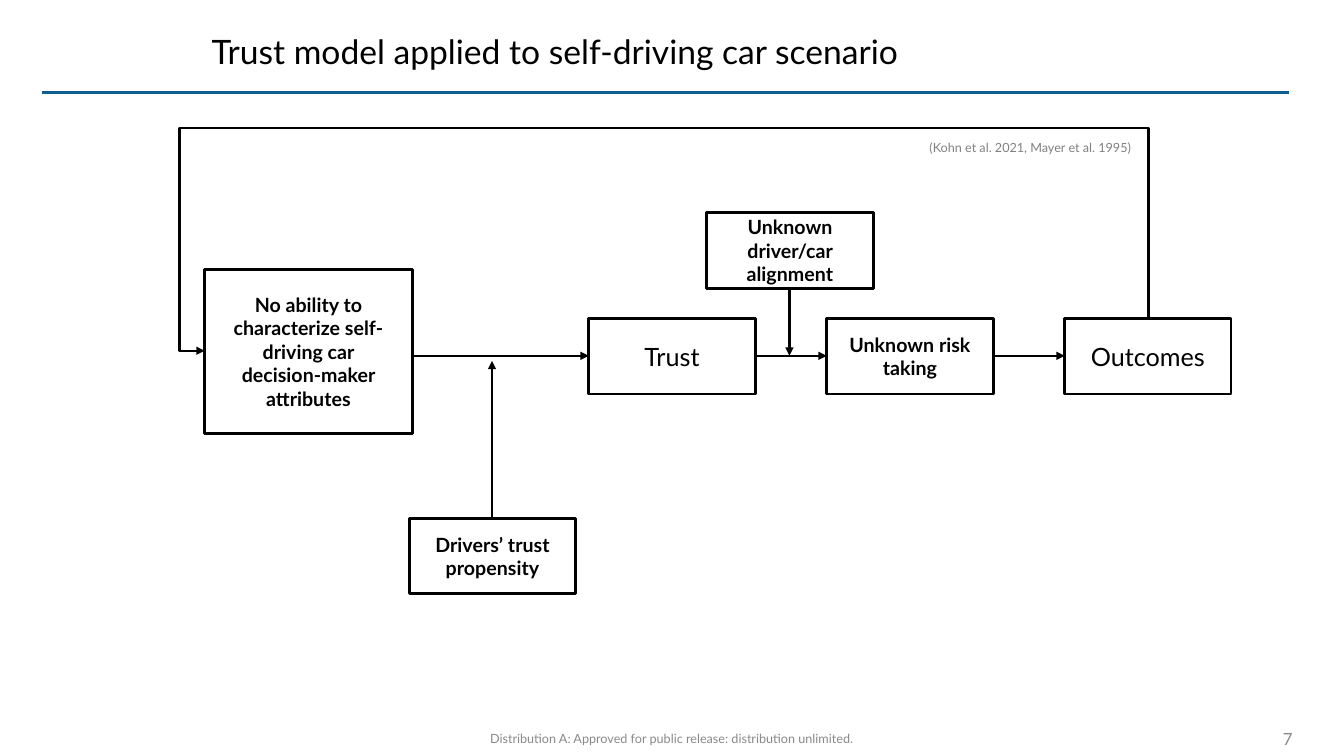
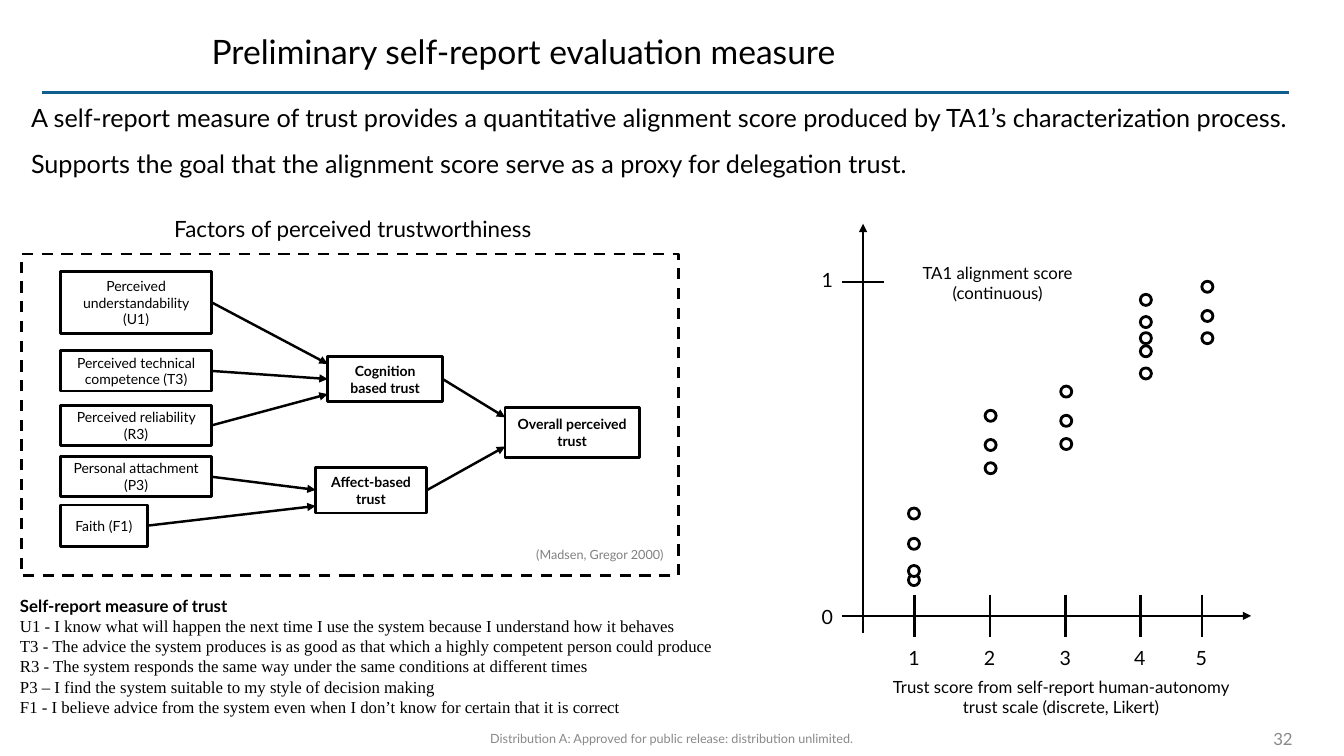
from dataclasses import dataclass
from typing import Optional

from lxml.etree import SubElement
from pptx import Presentation
from pptx.dml.color import RGBColor
from pptx.enum.dml import MSO_LINE
from pptx.enum.shapes import MSO_CONNECTOR, MSO_SHAPE
from pptx.enum.text import MSO_ANCHOR, PP_ALIGN
from pptx.oxml.ns import qn
from pptx.slide import Slide
from pptx.util import Inches, Pt

BLACK = RGBColor(0x00, 0x00, 0x00)
WHITE = RGBColor(0xFF, 0xFF, 0xFF)
BLUE = RGBColor(0x0F, 0x5E, 0x90)
GRAY = RGBColor(0x80, 0x80, 0x80)
PALE = RGBColor(0x89, 0x89, 0x89)

SANS = "Lato"
SERIF = "Times New Roman"
THIN, THICK = 1.75, 2
LEFT, MID, RIGHT = PP_ALIGN.LEFT, PP_ALIGN.CENTER, PP_ALIGN.RIGHT


@dataclass
class Para:
    text: str
    size: float
    color: RGBColor = BLACK
    bold: bool = False
    font: str = SANS
    gap: float = 0


@dataclass
class Box:
    x: float
    y: float
    w: float
    h: float
    text: str
    size: float
    bold: bool = False
    pad: float = 0.1


@dataclass
class Line:
    x1: float
    y1: float
    x2: float
    y2: float
    arrow: bool = True
    color: RGBColor = BLACK


@dataclass
class Note:
    x: float
    y: float
    w: float
    h: float
    paras: list[Para]
    align: PP_ALIGN = LEFT
    wrap: bool = True
    anchor: MSO_ANCHOR = MSO_ANCHOR.TOP


# Drawing tools
def write(frame, paras: list[Para], align: PP_ALIGN) -> None:
    for i, item in enumerate(paras):
        para = frame.paragraphs[0] if i == 0 else frame.add_paragraph()
        para.alignment = align
        if item.gap:
            para.space_before = Pt(item.gap)
        run = para.add_run()
        run.text = item.text
        font = run.font
        font.name, font.size, font.bold = item.font, Pt(item.size), item.bold
        font.color.rgb = item.color


def add_note(slide: Slide, note: Note) -> None:
    area = [Inches(v) for v in (note.x, note.y, note.w, note.h)]
    frame = slide.shapes.add_textbox(*area).text_frame
    frame.word_wrap = note.wrap
    frame.vertical_anchor = note.anchor
    write(frame, note.paras, note.align)


def add_form(slide: Slide, kind: MSO_SHAPE, x: float, y: float, w: float, h: float,
             fill: Optional[RGBColor] = WHITE):
    shape = slide.shapes.add_shape(kind, Inches(x), Inches(y), Inches(w), Inches(h))
    shape.shadow.inherit = False
    if fill is None:
        shape.fill.background()
    else:
        shape.fill.solid()
        shape.fill.fore_color.rgb = fill
    shape.line.color.rgb = BLACK
    shape.line.width = Pt(THICK)
    return shape


def add_box(slide: Slide, box: Box) -> None:
    shape = add_form(slide, MSO_SHAPE.RECTANGLE, box.x, box.y, box.w, box.h)
    frame = shape.text_frame
    frame.word_wrap = True
    frame.vertical_anchor = MSO_ANCHOR.MIDDLE
    frame.margin_left = frame.margin_right = Inches(box.pad)
    write(frame, [Para(box.text, box.size, bold=box.bold)], MID)


def add_head(shape) -> None:
    stroke = shape.element.spPr.find(qn("a:ln"))
    SubElement(stroke, qn("a:tailEnd")).set("type", "triangle")


def add_line(slide: Slide, line: Line) -> None:
    ends = [Inches(v) for v in (line.x1, line.y1, line.x2, line.y2)]
    shape = slide.shapes.add_connector(MSO_CONNECTOR.STRAIGHT, *ends)
    shape.line.color.rgb = line.color
    shape.line.width = Pt(THIN)
    SubElement(shape.element.spPr, qn("a:effectLst"))
    if line.arrow:
        add_head(shape)


def add_bend(slide: Slide, points: list[tuple[float, float]]) -> None:
    spots = [(Inches(x), Inches(y)) for x, y in points]
    pen = slide.shapes.build_freeform(*spots[0])
    pen.add_line_segments(spots[1:], close=False)
    shape = pen.convert_to_shape()
    shape.shadow.inherit = False
    shape.fill.background()
    shape.line.color.rgb = BLACK
    shape.line.width = Pt(THIN)
    add_head(shape)


# Shared frame: title, rule, footer and page number
def add_page(deck, title: str, page: int) -> Slide:
    slide = deck.slides.add_slide(deck.slide_layouts[6])
    add_line(slide, Line(0.42, 0.92, 12.78, 0.92, False, BLUE))
    foot = "Distribution A: Approved for public release: distribution unlimited."
    center = MSO_ANCHOR.MIDDLE
    for note in (
        Note(2, 0.17, 10.78, 0.67, [Para(title, 24)], anchor=center),
        Note(1.94, 7.16, 9.44, 0.33, [Para(foot, 9, PALE)], MID, anchor=center),
        Note(11.81, 7.17, 1.11, 0.32, [Para(str(page), 12, PALE)], RIGHT, anchor=center),
    ):
        add_note(slide, note)
    return slide


# Trust model
def add_model(deck) -> None:
    slide = add_page(deck, "Trust model applied to self-driving car scenario", 7)
    wide, high, row = 1.65, 0.75, 3.16
    axis = 3.53
    boxes = [
        Box(2.03, 2.67, 2.06, 1.63,
            "No ability to characterize self-driving car decision-maker attributes", 14, True, 0.2),
        Box(5.84, row, wide, high, "Trust", 18),
        Box(8.2, row, wide, high, "Unknown risk taking", 14, True),
        Box(10.56, row, wide, high, "Outcomes", 18),
        Box(4.06, 5.14, wide, high, "Drivers’ trust propensity", 14, True),
        Box(7.01, 2.11, wide, high, "Unknown driver/car alignment", 14, True),
    ]
    for box in boxes:
        add_box(slide, box)
    chain = boxes[:4]
    for a, b in zip(chain, chain[1:]):
        add_line(slide, Line(a.x + a.w, axis, b.x, axis))
    add_line(slide, Line(7.83, 2.86, 7.83, axis))
    add_line(slide, Line(4.88, 5.14, 4.88, 3.58))
    add_bend(slide, [(11.39, row), (11.39, 1.27), (1.78, 1.27), (1.78, 3.48), (2.03, 3.48)])
    cite = Para("(Kohn et al. 2021, Mayer et al. 1995)", 9, GRAY)
    add_note(slide, Note(9.12, 1.34, 2.27, 0.25, [cite], wrap=False))


# Factors of trust
def add_factors(slide: Slide) -> None:
    frame = add_form(slide, MSO_SHAPE.RECTANGLE, 0.21, 2.52, 6.52, 3.19, None)
    frame.line.dash_style = MSO_LINE.DASH
    left, wide = 0.6, 1.5
    boxes = [
        Box(left, 2.69, wide, 0.62, "Perceived understandability (U1)", 10),
        Box(left, 3.48, wide, 0.4, "Perceived technical competence (T3)", 10),
        Box(left, 4.02, wide, 0.4, "Perceived reliability (R3)", 10),
        Box(left, 4.53, wide, 0.4, "Personal attachment (P3)", 10),
        Box(left, 5.01, 0.86, 0.41, "Faith (F1)", 10),
        Box(3.25, 3.54, 1.14, 0.44, "Cognition based trust", 10, True),
        Box(3.13, 4.64, 1.1, 0.45, "Affect-based trust", 10, True),
        Box(5.01, 4.04, 1.33, 0.5, "Overall perceived trust", 10, True),
    ]
    for box in boxes:
        add_box(slide, box)
    # Source box, target box, height at the target
    links = [(0, 5, 3.61), (1, 5, 3.76), (2, 5, 3.91), (3, 6, 4.86),
             (4, 6, 5.02), (5, 7, 4.14), (6, 7, 4.43)]
    for start, end, y in links:
        a = boxes[start]
        add_line(slide, Line(a.x + a.w, a.y + a.h / 2, boxes[end].x, y))
    head = Para("Factors of perceived trustworthiness", 16)
    cite = Para("(Madsen, Gregor 2000)", 9, GRAY)
    add_note(slide, Note(1.63, 2.09, 3.9, 0.4, [head], wrap=False))
    add_note(slide, Note(5.22, 5.38, 1.5, 0.25, [cite], wrap=False))


# Score plot
def add_plot(slide: Slide) -> None:
    base, side, half, dot = 6.11, 8.56, 0.21, 0.11
    add_line(slide, Line(8.35, base, 12.41, base))
    add_line(slide, Line(side, 6.28, side, 2.22))
    add_line(slide, Line(side - half, 2.8, side + half, 2.8, False))

    def add_mark(text: str, x: float, y: float) -> None:
        add_note(slide, Note(x, y, 0.31, 0.34, [Para(text, 14)], wrap=False))

    add_mark("1", 8.05, 2.61)
    add_mark("0", 8.05, 5.95)
    # Tick, left of dots, tops of dots
    ranks = [
        (9.07, 9.01, (5.7, 5.61, 5.34, 5.04)),
        (9.82, 9.77, (4.59, 4.36, 4.07)),
        (10.57, 10.52, (4.35, 4.12, 3.83)),
        (11.31, 11.31, (3.65, 3.43, 3.3, 3.14, 2.92)),
        (11.92, 11.92, (3.3, 3.08, 2.79)),
    ]
    for rank, (tick, x, tops) in enumerate(ranks, 1):
        add_line(slide, Line(tick, base - half, tick, base + half, False))
        add_mark(str(rank), tick - 0.16, 6.36)
        for y in tops:
            add_form(slide, MSO_SHAPE.OVAL, x, y, dot, dot)
    score = [Para("TA1 alignment score", 12), Para("(continuous)", 12)]
    scale = Para("Trust score from self-report human-autonomy trust scale (discrete, Likert)", 12)
    add_note(slide, Note(8.91, 2.56, 1.97, 0.5, score, MID))
    add_note(slide, Note(8.6, 6.66, 3.85, 0.5, [scale], MID))


# Self-report measure
def add_measure(deck) -> None:
    slide = add_page(deck, "Preliminary self-report evaluation measure", 32)
    goals = [
        Para("A self-report measure of trust provides a quantitative alignment score "
             "produced by TA1’s characterization process.", 18),
        Para("Supports the goal that the alignment score serve as a proxy for delegation trust.",
             18, gap=10.8),
    ]
    add_note(slide, Note(0.21, 0.97, 12.8, 0.88, goals))
    add_factors(slide)
    add_plot(slide)
    items = [
        "U1 - I know what will happen the next time I use the system because "
        "I understand how it behaves",
        "T3 - The advice the system produces is as good as that which "
        "a highly competent person could produce",
        "R3 - The system responds the same way under the same conditions at different times",
        "P3 – I find the system suitable to my style of decision making",
        "F1 - I believe advice from the system even when I don’t know for certain "
        "that it is correct",
    ]
    paras = [Para("Self-report measure of trust", 12, bold=True)]
    paras += [Para(item, 12, font=SERIF) for item in items]
    add_note(slide, Note(0.1, 5.86, 7.17, 1.31, paras))


def main() -> None:
    deck = Presentation()
    deck.slide_width, deck.slide_height = Inches(13.33), Inches(7.5)
    add_model(deck)
    add_measure(deck)
    deck.save("out.pptx")


if __name__ == "__main__":
    main()
